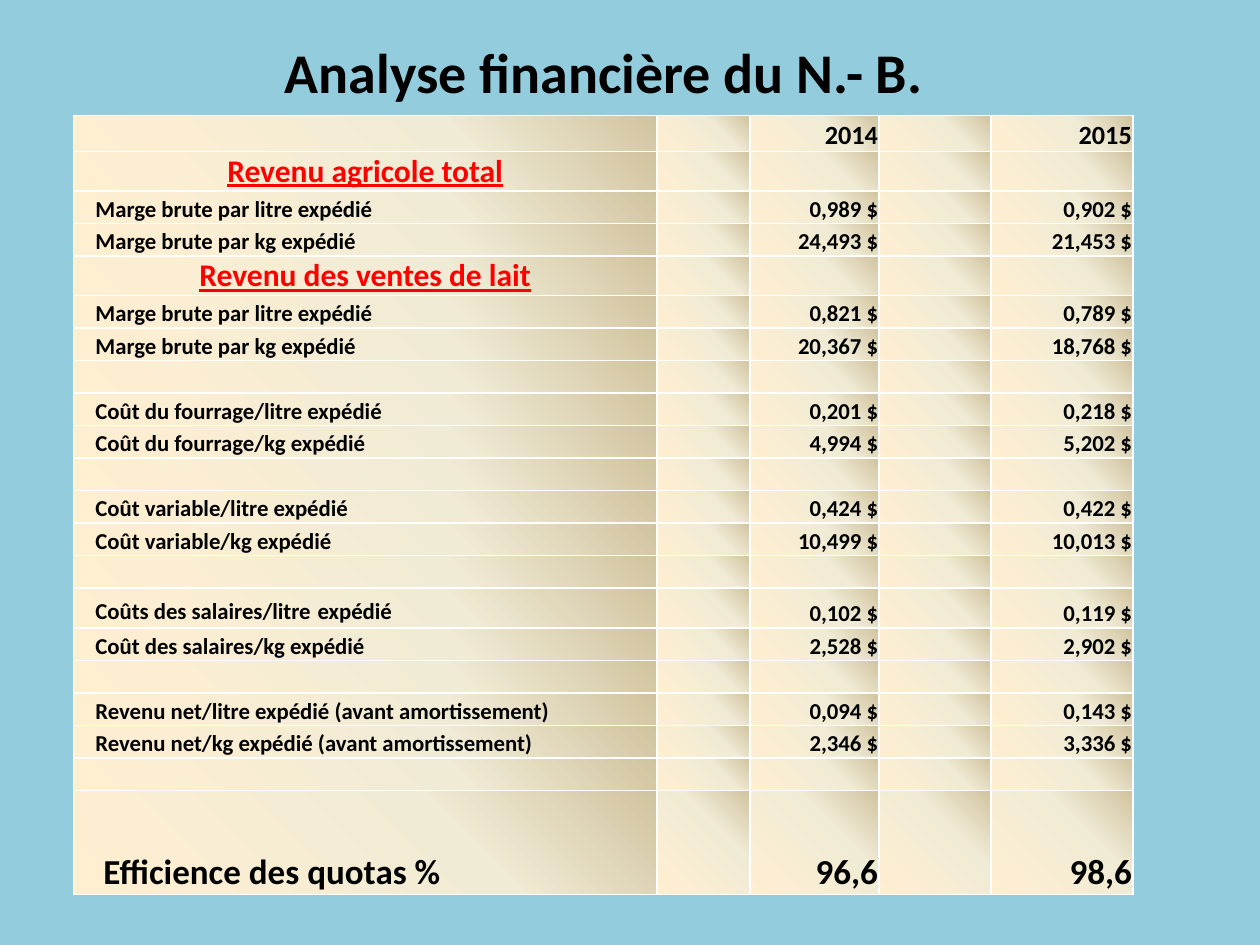
from lxml import etree
from pptx import Presentation
from pptx.dml.color import RGBColor
from pptx.enum.text import MSO_ANCHOR, PP_ALIGN
from pptx.oxml.ns import qn
from pptx.util import Pt

BOTTOM = MSO_ANCHOR.BOTTOM
LEFT, CENTER, RIGHT = PP_ALIGN.LEFT, PP_ALIGN.CENTER, PP_ALIGN.RIGHT

SCALE = 914400 / 252  # EMU per px, 252 px to the inch
BACKGROUND = RGBColor(0x93, 0xCD, 0xDD)
BLACK = RGBColor(0x00, 0x00, 0x00)
RED = RGBColor(0xFF, 0x00, 0x00)
WHITE = RGBColor(0xFF, 0xFF, 0xFF)
CELL_GRADIENT = (
    (0, RGBColor(0xFF, 0xEF, 0xD1)),
    (65, RGBColor(0xF0, 0xEB, 0xD5)),
    (100, RGBColor(0xD1, 0xC3, 0x9F)),
)
GRADIENT_ANGLE = 315

# Kind of row: height in px, text size, label indent in px
ROW_KINDS = {
    "header": (72, 15, 2),
    "section": (79, 18, 2),
    "line": (65, 13, 44),
    "wages": (80, 13, 44),
    "quota": (208, 20, 60),
}
COLUMN_WIDTHS = (1167, 186, 258, 224, 284)
BLANK_ROW = ("line", "", "", "")
ROWS = (
    ("header", "", "2014", "2015"),
    ("section", "Revenu agricole total", "", ""),
    ("line", "Marge brute par litre expédié", "0,989 $", "0,902 $"),
    ("line", "Marge brute par kg expédié", "24,493 $", "21,453 $"),
    ("section", "Revenu des ventes de lait", "", ""),
    ("line", "Marge brute par litre expédié", "0,821 $", "0,789 $"),
    ("line", "Marge brute par kg expédié", "20,367 $", "18,768 $"),
    BLANK_ROW,
    ("line", "Coût du fourrage/litre expédié", "0,201 $", "0,218 $"),
    ("line", "Coût du fourrage/kg expédié", "4,994 $", "5,202 $"),
    BLANK_ROW,
    ("line", "Coût variable/litre expédié", "0,424 $", "0,422 $"),
    ("line", "Coût variable/kg expédié", "10,499 $", "10,013 $"),
    BLANK_ROW,
    ("wages", "Coûts des salaires/litre expédié", "0,102 $", "0,119 $"),
    ("line", "Coût des salaires/kg expédié", "2,528 $", "2,902 $"),
    BLANK_ROW,
    ("line", "Revenu net/litre expédié (avant amortissement)", "0,094 $", "0,143 $"),
    ("line", "Revenu net/kg expédié (avant amortissement)", "2,346 $", "3,336 $"),
    BLANK_ROW,
    ("quota", "Efficience des quotas %", "96,6", "98,6"),
)


def px(length):
    return round(length * SCALE)


def add_color(parent, color):
    etree.SubElement(parent, qn("a:srgbClr"), val=str(color))


class SlideBuilder:
    font_name = "Calibri"

    def __init__(self, slide):
        self.slide = slide
        fill = slide.background.fill
        fill.solid()
        fill.fore_color.rgb = BACKGROUND

    def format_run(self, run, size, color=BLACK, bold=True, underline=False):
        font = run.font
        font.name = self.font_name
        font.size = Pt(size)
        font.bold = bold
        font.underline = underline
        font.color.rgb = color

    def title(self, text, left, top, width, height, size):
        shape = self.slide.shapes.add_textbox(px(left), px(top), px(width), px(height))
        shape.text_frame.word_wrap = True
        shape.text_frame.text = text
        paragraph = shape.text_frame.paragraphs[0]
        paragraph.alignment = CENTER
        self.format_run(paragraph.runs[0], size)

    def style_cell(self, cell):
        properties = cell._tc.get_or_add_tcPr()
        # Borders come before the fill
        for side in ("a:lnL", "a:lnR", "a:lnT", "a:lnB"):
            line = etree.SubElement(properties, qn(side), w=str(Pt(1)))
            add_color(etree.SubElement(line, qn("a:solidFill")), WHITE)
        gradient = etree.SubElement(properties, qn("a:gradFill"), rotWithShape="1")
        stops = etree.SubElement(gradient, qn("a:gsLst"))
        for position, color in CELL_GRADIENT:
            stop = etree.SubElement(stops, qn("a:gs"), pos=str(position * 1000))
            add_color(stop, color)
        etree.SubElement(
            gradient, qn("a:lin"), ang=str(GRADIENT_ANGLE * 60000), scaled="0"
        )

    def write_cell(self, cell, text, kind, column):
        size, indent = ROW_KINDS[kind][1:]
        is_label = column == 0
        is_section = kind == "section"
        cell.vertical_anchor = BOTTOM
        cell.margin_left = px(indent if is_label else 2)
        cell.margin_right = cell.margin_top = px(2)
        cell.margin_bottom = 0
        paragraph = cell.text_frame.paragraphs[0]
        if not text:
            # Keeps empty cells from stretching their row
            etree.SubElement(paragraph._p, qn("a:endParaRPr"), sz=str(size * 100))
            return
        paragraph.alignment = RIGHT if not is_label else CENTER if is_section else LEFT
        if kind == "wages" and is_label:
            # The last space of this label is larger and not bold
            parts = text.rpartition(" ")
        else:
            parts = (text,)
        for part in parts:
            run = paragraph.add_run()
            run.text = part
            if part == " ":
                self.format_run(run, 18, bold=False)
            else:
                color = RED if is_section else BLACK
                self.format_run(run, size, color, underline=is_section)

    def table(self, left, top):
        heights = [ROW_KINDS[row[0]][0] for row in ROWS]
        frame = self.slide.shapes.add_table(
            len(ROWS), len(COLUMN_WIDTHS),
            px(left), px(top), px(sum(COLUMN_WIDTHS)), px(sum(heights)),
        )
        table = frame.table
        table.first_row = table.horz_banding = False
        for column, width in zip(table.columns, COLUMN_WIDTHS):
            column.width = px(width)
        for index, (kind, label, first_year, second_year) in enumerate(ROWS):
            table.rows[index].height = px(heights[index])
            # Years are set apart by empty columns
            for column, text in enumerate((label, "", first_year, "", second_year)):
                cell = table.cell(index, column)
                self.style_cell(cell)
                self.write_cell(cell, text, kind, column)


def main():
    presentation = Presentation()
    presentation.slide_width = px(2520)
    presentation.slide_height = px(1890)
    builder = SlideBuilder(presentation.slides.add_slide(presentation.slide_layouts[6]))

    # Financial table
    builder.table(147, 231)

    # Title
    builder.title("Analyse financière du N.- B.", 147, 63, 2122, 161, 32)

    presentation.save("out.pptx")


if __name__ == "__main__":
    main()
